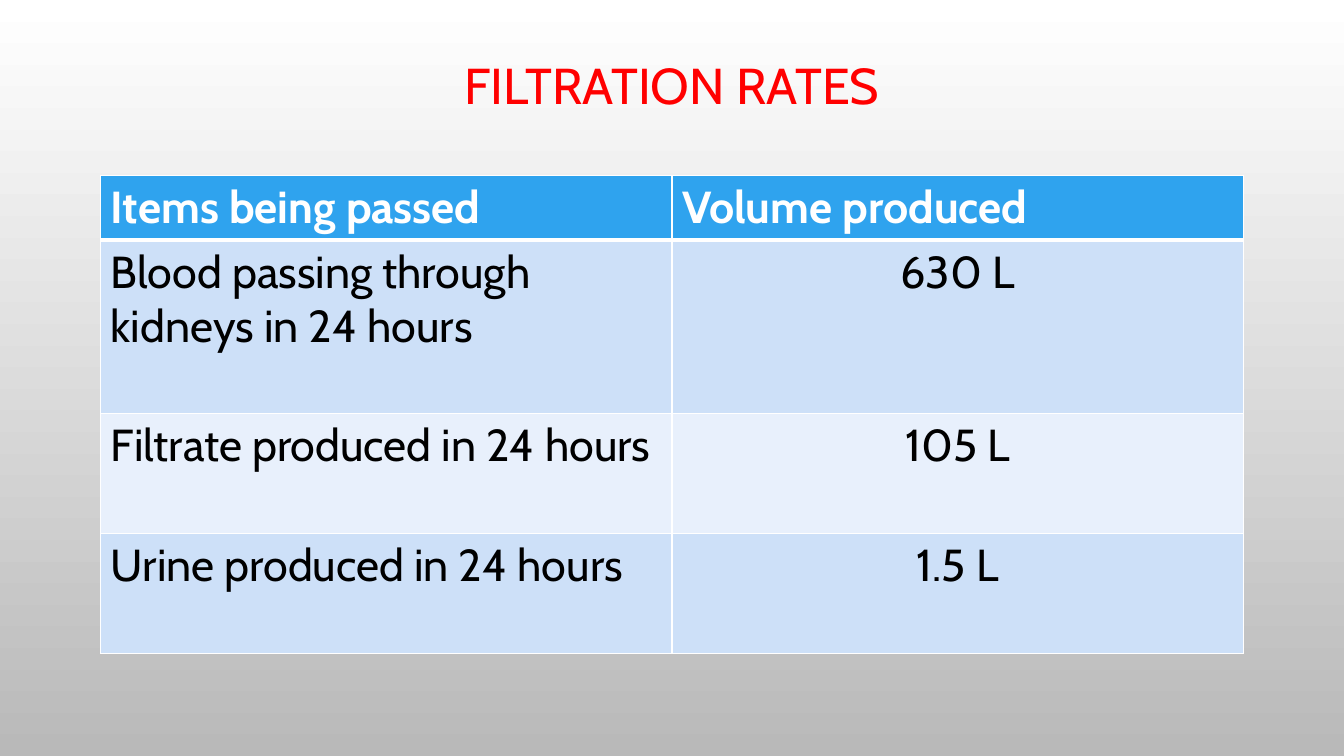
from lxml import etree
from pptx import Presentation
from pptx import util as u
from pptx.dml.color import RGBColor
from pptx.enum import text
from pptx.oxml import ns

WHITE = RGBColor(0xFF, 0xFF, 0xFF)
GREY = RGBColor(0xB9, 0xB9, 0xB9)
RED = RGBColor(0xFF, 0x00, 0x00)
BLACK = RGBColor(0x00, 0x00, 0x00)
HEADER_BLUE = RGBColor(0x2F, 0xA3, 0xEE)
BAND_DARK = RGBColor(0xCD, 0xE0, 0xF8)
BAND_LIGHT = RGBColor(0xE8, 0xF0, 0xFC)

ROWS = [
    ("Items being passed", "Volume produced"),
    ("Blood passing through kidneys in 24 hours", "630 L"),
    ("Filtrate produced in 24 hours", "105 L"),
    ("Urine produced in 24 hours", "1.5 L"),
]
ROW_HEIGHTS = [0.64, 1.72, 1.19, 1.19]


class SlideBuilder:
    font_name = "Cabin"

    def __init__(self, presentation):
        self.slide = presentation.slides.add_slide(presentation.slide_layouts[6])

    def background(self, top_color, bottom_color):
        fill = self.slide.background.fill
        fill.gradient()
        fill.gradient_angle = 270
        for stop, color, position in zip(fill.gradient_stops, (top_color, bottom_color), (0, 1)):
            stop.color.rgb = color
            stop.position = position

    def add_text(self, paragraph, wording, align, color, **font_format):
        paragraph.alignment = align
        run = paragraph.add_run()
        run.text = wording
        run.font.color.rgb = color
        for name, value in {"name": self.font_name, **font_format}.items():
            setattr(run.font, name, value)

    def title(self, wording, left, top, width, height):
        shape = self.slide.shapes.add_textbox(*map(u.Inches, (left, top, width, height)))
        frame = shape.text_frame
        frame.word_wrap = True
        frame.vertical_anchor = text.MSO_ANCHOR.MIDDLE
        frame.paragraphs[0].line_spacing = 0.9
        self.add_text(frame.paragraphs[0], wording, text.PP_ALIGN.CENTER, RED, size=u.Pt(36))

    def border(self, cell, bottom_width):
        properties = cell._tc.get_or_add_tcPr()
        widths = {"a:lnL": 1, "a:lnR": 1, "a:lnT": 1, "a:lnB": bottom_width}
        for index, (tag, width) in enumerate(widths.items()):
            line = etree.Element(ns.qn(tag), w=str(u.Pt(width)))
            fill = etree.SubElement(line, ns.qn("a:solidFill"))
            etree.SubElement(fill, ns.qn("a:srgbClr"), val=str(WHITE))
            properties.insert(index, line)

    def table(self, rows, heights, left, top, width):
        shape = self.slide.shapes.add_table(
            len(rows), len(rows[0]), *map(u.Inches, (left, top, width, sum(heights))))
        table = shape.table
        for row_index, row in enumerate(rows):
            table.rows[row_index].height = u.Inches(heights[row_index])
            header = row_index == 0
            band = BAND_DARK if row_index % 2 else BAND_LIGHT
            for column_index, wording in enumerate(row):
                cell = table.cell(row_index, column_index)
                cell.fill.solid()
                cell.fill.fore_color.rgb = HEADER_BLUE if header else band
                centred = column_index == 1 and not header
                self.add_text(cell.text_frame.paragraphs[0], wording,
                              text.PP_ALIGN.CENTER if centred else text.PP_ALIGN.LEFT,
                              WHITE if header else BLACK, size=u.Pt(32), bold=header)
                self.border(cell, 3 if header else 1)


def main():
    presentation = Presentation()
    presentation.slide_width = u.Inches(13.33)
    presentation.slide_height = u.Inches(7.5)
    builder = SlideBuilder(presentation)

    # Background and title
    builder.background(WHITE, GREY)
    builder.title("FILTRATION RATES", 1, 0, 11.33, 1.75)

    # Filtration volumes
    builder.table(ROWS, ROW_HEIGHTS, 1, 1.74, 11.33)

    presentation.save("out.pptx")


if __name__ == "__main__":
    main()
